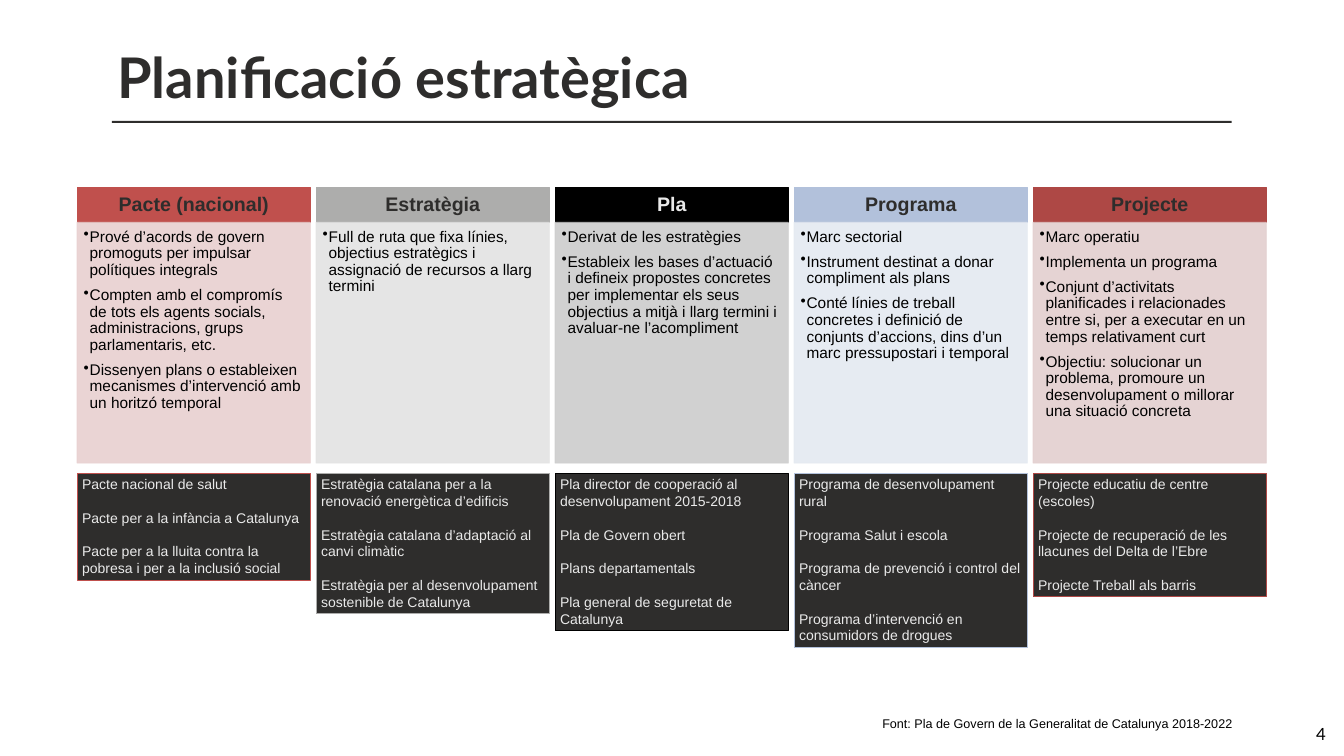
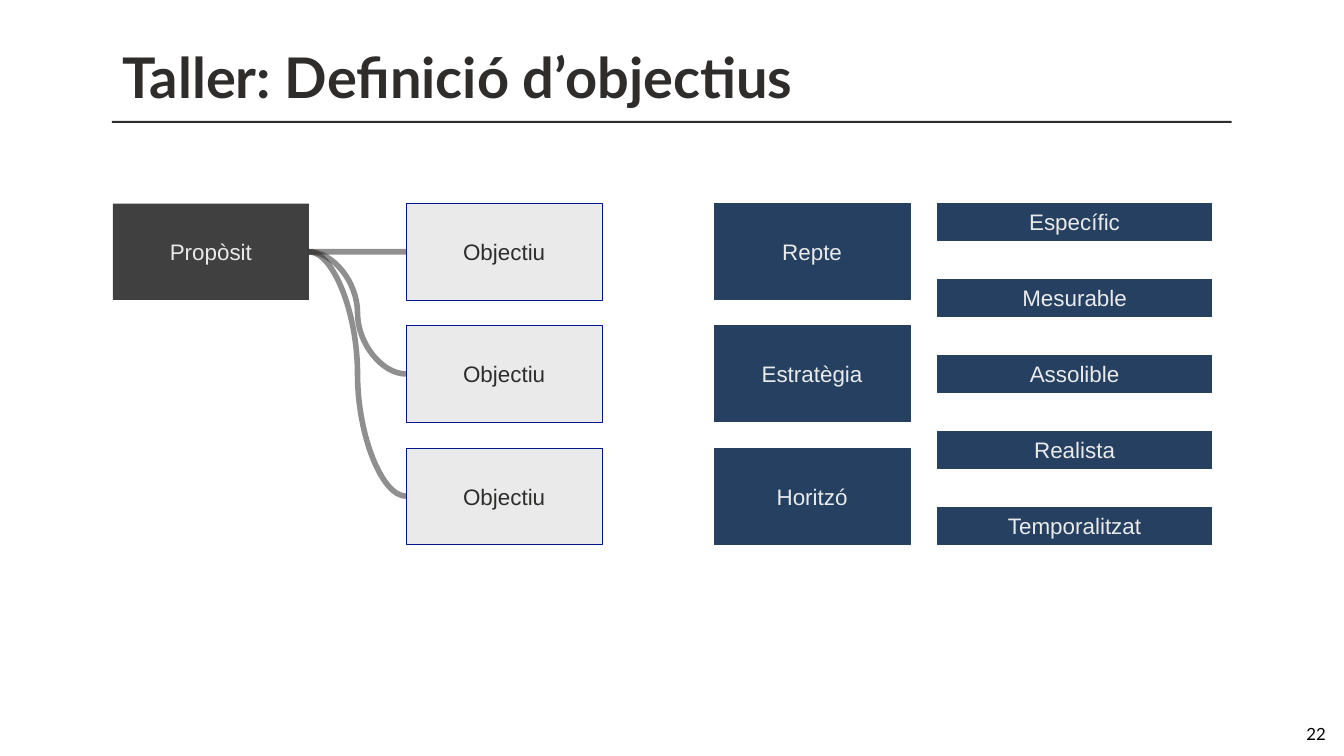
from typing import NamedTuple

from lxml import etree
from pptx import Presentation
from pptx import util as u
from pptx.dml.color import RGBColor
from pptx.enum import shapes, text
from pptx.oxml.ns import qn

COLS, ROWS = 26.67, 15
COLORS = {
    "ink": "2E2D2C", "white": "FFFFFF", "black": "000000", "pale": "EAEAEA",
    "charcoal": "404040", "navy": "254061", "blue": "001689",
    "red": "C0504D", "red_tint": "E8D0D0", "grey": "ADADAC", "grey_tint": "E3E3E3",
    "black_tint": "CCCCCC", "sky": "B2C1DB", "sky_tint": "E4E9F1",
    "brick": "AE4845", "brick_tint": "E3CFCF",
}
TITLE_FONT, BODY_FONT = "Lato", "Arial"
MIDDLE, TOP = text.MSO_ANCHOR.MIDDLE, text.MSO_ANCHOR.TOP
CENTER, LEFT, RIGHT = text.PP_ALIGN.CENTER, text.PP_ALIGN.LEFT, text.PP_ALIGN.RIGHT
INSETS = (0.1, 0.05, 0.1, 0.05)
EVEN = (0.1,) * 4


class Box(NamedTuple):
    """A rectangle measured in columns and rows of the slide grid."""
    x: float
    y: float
    w: float
    h: float

    def emu(self):
        """Return the box as python-pptx lengths."""
        return [u.Inches(v) for v in self]

    def across(self, n, size):
        """Spread n columns of the given width evenly over the box."""
        step = (self.w - size) / (n - 1)
        return [Box(self.x + i * step, self.y, size, self.h) for i in range(n)]

    def down(self, n, size):
        """Spread n rows of the given height evenly over the box."""
        step = (self.h - size) / (n - 1)
        return [Box(self.x, self.y + i * step, self.w, size) for i in range(n)]


SLIDE = Box(0, 0, COLS, ROWS)

PLANNING = [
    ("Pacte (nacional)", "red", "ink", 6,
     ["Prové d’acords de govern promoguts per impulsar polítiques integrals",
      "Compten amb el compromís de tots els agents socials, administracions, grups "
      "parlamentaris, etc.",
      "Dissenyen plans o estableixen mecanismes d’intervenció amb un horitzó temporal"],
     ["Pacte nacional de salut", "Pacte per a la infància a Catalunya",
      "Pacte per a la lluita contra la pobresa i per a la inclusió social"]),
    ("Estratègia", "grey", "ink", 8,
     ["Full de ruta que fixa línies, objectius estratègics i assignació de recursos a "
      "llarg termini"],
     ["Estratègia catalana per a la renovació energètica d’edificis",
      "Estratègia catalana d’adaptació al canvi climàtic",
      "Estratègia per al desenvolupament sostenible de Catalunya"]),
    ("Pla", "black", "pale", 9,
     ["Derivat de les estratègies",
      "Estableix les bases d’actuació i defineix propostes concretes per implementar els "
      "seus objectius a mitjà i llarg termini i avaluar-ne l’acompliment"],
     ["Pla director de cooperació al desenvolupament 2015-2018", "Pla de Govern obert",
      "Plans departamentals", "Pla general de seguretat de Catalunya"]),
    ("Programa", "sky", "ink", 10,
     ["Marc sectorial", "Instrument destinat a donar compliment als plans",
      "Conté línies de treball concretes i definició de conjunts d’accions, dins d’un "
      "marc pressupostari i temporal"],
     ["Programa de desenvolupament rural", "Programa Salut i escola",
      "Programa de prevenció i control del càncer",
      "Programa d’intervenció en consumidors de drogues"]),
    ("Projecte", "brick", "ink", 7,
     ["Marc operatiu", "Implementa un programa",
      "Conjunt d’activitats planificades i relacionades entre si, per a executar en un "
      "temps relativament curt",
      "Objectiu: solucionar un problema, promoure un desenvolupament o millorar una "
      "situació concreta"],
     ["Projecte educatiu de centre (escoles)",
      "Projecte de recuperació de les llacunes del Delta de l’Ebre",
      "Projecte Treball als barris"]),
]


def rgb(name):
    """Look up a palette colour."""
    return RGBColor.from_string(COLORS[name])


def set_alpha(color_format_parent, percent):
    """Set the opacity of the solid fill found below an element."""
    color = color_format_parent.find(".//" + qn("a:srgbClr"))
    etree.SubElement(color, qn("a:alpha")).set("val", str(percent * 1000))


def add_bullet(p, indent):
    """Give a paragraph a hanging round bullet."""
    pr = p._p.get_or_add_pPr()
    pr.set("marL", str(u.Inches(indent)))
    pr.set("indent", str(-u.Inches(indent)))
    etree.SubElement(pr, qn("a:buChar")).set("char", "•")


def write(sp, lines, size, color, font=BODY_FONT, bold=False, align=LEFT, anchor=TOP,
          insets=INSETS, wrap=True, before=0, after=0, spacing=None, bullet=None, grow=False):
    """Fill a shape with paragraphs of one style."""
    tf = sp.text_frame
    tf.word_wrap = wrap
    tf.auto_size = text.MSO_AUTO_SIZE.SHAPE_TO_FIT_TEXT if grow else text.MSO_AUTO_SIZE.NONE
    tf.vertical_anchor = anchor
    tf.margin_left, tf.margin_top, tf.margin_right, tf.margin_bottom = map(u.Inches, insets)
    for i, line in enumerate(lines):
        p = tf.paragraphs[0] if i == 0 else tf.add_paragraph()
        if bullet:
            add_bullet(p, bullet)
            p.level = 1
        p.alignment = align
        p.space_before = u.Pt(before if i else 0)
        p.space_after = u.Pt(after)
        if spacing:
            p.line_spacing = spacing
        r = p.add_run()
        r.text = line
        r.font.size, r.font.name, r.font.bold = u.Pt(size), font, bold
        r.font.color.rgb = rgb(color)


def add_rect(slide, box, fill, line=None, alpha=None):
    """Draw a flat rectangle."""
    sp = slide.shapes.add_shape(shapes.MSO_SHAPE.RECTANGLE, *box.emu())
    sp.shadow.inherit = False
    sp.fill.solid()
    sp.fill.fore_color.rgb = rgb(fill)
    if line:
        sp.line.color.rgb = rgb(line)
        sp.line.width = u.Pt(1)
    else:
        sp.line.fill.background()
    if alpha:
        set_alpha(sp._element.spPr, alpha)
        if line:
            set_alpha(sp.line._get_or_add_ln(), alpha)
    return sp


def add_label(slide, box, label, fill, line=None, color="pale", insets=INSETS):
    """Draw a rectangle with one centred label."""
    sp = add_rect(slide, box, fill, line)
    write(sp, [label], 32, color, align=CENTER, anchor=MIDDLE, insets=insets)
    return sp


def add_text(slide, box, line, size, color, **style):
    """Place a one-line text box."""
    write(slide.shapes.add_textbox(*box.emu()), [line], size, color, **style)


def new_slide(prs, title, number, box=SLIDE, title_inset=0.1):
    """Add a slide with the shared rule, title band and page number."""
    slide = prs.slides.add_slide(prs.slide_layouts[6])
    slide.background.fill.solid()
    slide.background.fill.fore_color.rgb = rgb("white")
    add_rect(slide, Box(box.x + 2.22, box.y + 2.4, 22.22, 0.04), "ink")
    add_text(slide, Box(box.w - 3.26, box.h - 0.65, 3, 0.4), number, 24, "black",
             font=TITLE_FONT, align=RIGHT, anchor=MIDDLE, insets=EVEN, wrap=False)
    add_rect(slide, Box(box.x, box.y + 0.02, box.w, 2.28), "white")
    add_text(slide, Box(box.x + 2.23, box.y + 0.73, 22.22, 1.57), title, 80, "ink",
             font=TITLE_FONT, bold=True, anchor=MIDDLE,
             insets=(title_inset, 0.1, title_inset, 0.1))
    return slide


def planning_column(slide, box, name, tone, name_color, example_rows, traits, examples):
    """Stack a heading, its traits and a dark list of examples."""
    head = Box(box.x, box.y, box.w, 0.69)
    body = Box(box.x, box.y + head.h, box.w, 4.78)
    notes = Box(box.x, box.y + 5.67, box.w, 0.1 + 0.336 * example_rows)
    write(add_rect(slide, head, tone, tone), [name], 28, name_color, bold=True, align=CENTER,
          anchor=MIDDLE, insets=(0.22, 0.12, 0.22, 0.12), spacing=0.9)
    tint = tone + "_tint"
    write(add_rect(slide, body, tint, tint, alpha=90), traits, 22, "black",
          insets=(0.13, 0.13, 0.17, 0.19), after=12, spacing=0.9, bullet=0.12)
    write(add_rect(slide, notes, "ink", tone), examples, 20, "pale",
          before=12, after=12, grow=True)


def purpose_tree(slide, box):
    """Link one purpose to a stack of objectives."""
    w, h = 3.89, 1.91
    purpose = add_label(slide, Box(box.x, box.y, w, h), "Propòsit", "charcoal")
    for cell in Box(box.x + box.w - w, box.y, w, box.h).down(3, h):
        goal = add_label(slide, cell, "Objectiu", "pale", "blue", "ink", (0.12,) * 4)
        link = slide.shapes.add_connector(shapes.MSO_CONNECTOR.CURVE, 0, 0, 0, 0)
        link.begin_connect(purpose, 3)
        link.end_connect(goal, 1)
        link.line.color.rgb = rgb("ink")
        link.line.width = u.Pt(8)
        set_alpha(link.line._get_or_add_ln(), 52)
        etree.SubElement(link._element.spPr, qn("a:effectLst"))


def criteria_grid(slide, box):
    """Show the three planning questions beside the five objective criteria."""
    questions = Box(box.x, box.y, 3.89, box.h)
    criteria = Box(box.x + box.w - 5.43, box.y, 5.43, box.h)
    stacks = [
        (questions, 1.91, ["Repte", "Estratègia", "Horitzó"]),
        (criteria, 0.73, ["Específic", "Mesurable", "Assolible", "Realista", "Temporalitzat"]),
    ]
    for stack, height, labels in stacks:
        for cell, label in zip(stack.down(len(labels), height), labels):
            add_label(slide, cell, label, "navy", "navy")


def planning_slide(prs):
    """Build the comparison of planning instruments."""
    slide = new_slide(prs, "Planificació estratègica", "4")
    columns = Box(1.53, 3.72, 23.6, 9.14).across(len(PLANNING), 4.63)
    for box, column in zip(columns, PLANNING):
        planning_column(slide, box, *column)
    add_text(slide, Box(17.41, 14.16, 7.21, 0.4),
             "Font: Pla de Govern de la Generalitat de Catalunya 2018-2022", 18, "black",
             wrap=False, grow=True)


def workshop_slide(prs):
    """Build the workshop on defining objectives."""
    slide = new_slide(prs, "Taller: Definició d’objectius", "22", title_inset=0.2)
    purpose_tree(slide, Box(2.24, 4.04, 9.71, 6.76))
    criteria_grid(slide, Box(14.17, 4.03, 9.87, 6.77))


def main():
    """Create and save the presentation."""
    prs = Presentation()
    prs.slide_width, prs.slide_height = u.Inches(COLS), u.Inches(ROWS)
    planning_slide(prs)
    workshop_slide(prs)
    prs.save("out.pptx")


if __name__ == "__main__":
    main()
